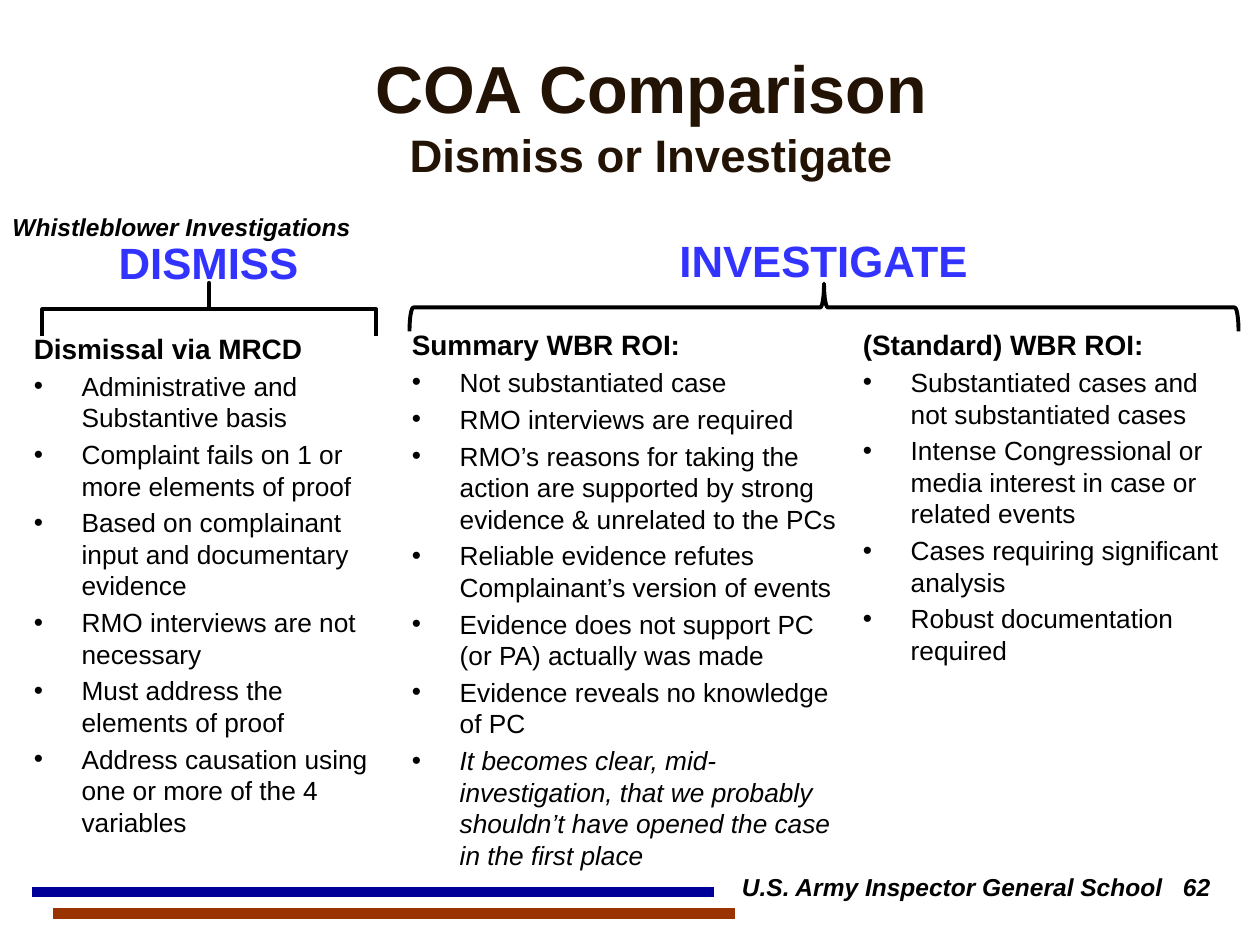
from dataclasses import dataclass

from pptx import Presentation
from pptx.dml.color import RGBColor
from pptx.enum.shapes import MSO_CONNECTOR, MSO_SHAPE
from pptx.enum.text import MSO_ANCHOR, PP_ALIGN
from pptx.oxml.ns import qn
from pptx.util import Inches, Pt
from lxml.etree import SubElement


@dataclass(frozen=True)
class Theme:
    font: str = "Arial"
    black: str = "000000"
    title: str = "221304"
    heading: str = "3333FF"
    blue_rule: str = "000099"
    red_rule: str = "993300"
    title_size: int = 38
    subtitle_size: int = 26
    heading_size: int = 25
    lead_size: int = 16
    bullet_size: int = 15
    label_size: int = 14
    bullet_space: int = 3


THEME = Theme()

# Left, top, width, heading, bullets, whether the last bullet is italic
COLUMNS = [
    (0.17, 2.58, 3, "Dismissal via MRCD", [
        "Administrative and Substantive basis",
        "Complaint fails on 1 or more elements of proof",
        "Based on complainant input and documentary evidence",
        "RMO interviews are not necessary",
        "Must address the elements of proof",
        "Address causation using one or more of the 4 variables",
    ], False),
    (3.17, 2.55, 3.58, "Summary WBR ROI:", [
        "Not substantiated case",
        "RMO interviews are required",
        "RMO’s reasons for taking the action are supported by strong "
        "evidence & unrelated to the PCs",
        "Reliable evidence refutes Complainant’s version of events",
        "Evidence does not support PC (or PA) actually was made",
        "Evidence reveals no knowledge of PC",
        "It becomes clear, mid‐investigation, that we probably "
        "shouldn’t have opened the case in the first place",
    ], True),
    (6.75, 2.55, 3.17, "(Standard) WBR ROI:", [
        "Substantiated cases and not substantiated cases",
        "Intense Congressional or media interest in case or related events",
        "Cases requiring significant analysis",
        "Robust documentation required",
    ], False),
]


def set_font(font, size, color=THEME.black, bold=True, italic=False):
    font.name = THEME.font
    font.size = Pt(size)
    font.color.rgb = RGBColor.from_string(color)
    font.bold = bold
    font.italic = italic


def add_text_frame(slide, left, top, width, height):
    box = slide.shapes.add_textbox(
        Inches(left), Inches(top), Inches(width), Inches(height))
    box.text_frame.word_wrap = True
    return box.text_frame


def add_label(slide, left, top, width, text, size, color=THEME.black,
              italic=False, align=PP_ALIGN.LEFT):
    paragraph = add_text_frame(slide, left, top, width, 0.5).paragraphs[0]
    paragraph.text = text
    paragraph.alignment = align
    set_font(paragraph.font, size, color, italic=italic)
    return paragraph


def add_tab_stop(paragraph, position):
    properties = paragraph._p.get_or_add_pPr()
    stops = SubElement(properties, qn("a:tabLst"))
    SubElement(stops, qn("a:tab"), pos=str(Inches(position)), algn="l")
    # The tab list must come before the default run properties
    properties.insert(0, stops)


def add_title(slide):
    frame = add_text_frame(slide, 0.67, 0.28, 9, 1.25)
    frame.vertical_anchor = MSO_ANCHOR.MIDDLE
    paragraph = frame.paragraphs[0]
    paragraph.alignment = PP_ALIGN.CENTER
    title = paragraph.add_run()
    title.text = "COA Comparison"
    set_font(title.font, THEME.title_size, THEME.title)
    paragraph.add_line_break()
    subtitle = paragraph.add_run()
    subtitle.text = "Dismiss or Investigate"
    set_font(subtitle.font, THEME.subtitle_size, THEME.title)


def add_bullet(frame, text, italic):
    paragraph = frame.add_paragraph()
    paragraph.text = text
    paragraph.space_before = Pt(THEME.bullet_space)
    properties = paragraph._p.get_or_add_pPr()
    indent = Inches(0.38)
    properties.set("marL", str(indent))
    properties.set("indent", str(-indent))
    SubElement(properties, qn("a:buFont"), typeface=THEME.font)
    SubElement(properties, qn("a:buChar"), char="•")
    set_font(paragraph.font, THEME.bullet_size, bold=False, italic=italic)


def add_column(slide, left, top, width, heading, bullets, italic_last):
    frame = add_text_frame(slide, left, top, width, 4.9)
    paragraph = frame.paragraphs[0]
    paragraph.text = heading
    set_font(paragraph.font, THEME.lead_size)
    for number, text in enumerate(bullets, start=1):
        add_bullet(frame, text, italic_last and number == len(bullets))


def add_brace(slide, left, top, width, height, curve):
    shape = slide.shapes.add_shape(
        MSO_SHAPE.RIGHT_BRACE,
        Inches(left), Inches(top), Inches(width), Inches(height))
    shape.rotation = 270
    shape.adjustments[0] = curve
    shape.shadow.inherit = False
    shape.fill.background()
    shape.line.color.rgb = RGBColor.from_string(THEME.black)
    shape.line.width = Pt(2.25)


def add_rule(slide, left, right, top, color):
    rule = slide.shapes.add_connector(
        MSO_CONNECTOR.STRAIGHT,
        Inches(left), Inches(top), Inches(right), Inches(top))
    rule.line.color.rgb = RGBColor.from_string(color)
    rule.line.width = Pt(6)
    SubElement(rule._element.spPr, qn("a:effectLst"))


def main():
    presentation = Presentation()
    presentation.slide_width = Inches(10)
    presentation.slide_height = Inches(7.5)
    slide = presentation.slides.add_slide(presentation.slide_layouts[6])

    # Footer rules and running labels
    add_rule(slide, 0.25, 5.67, 7.08, THEME.blue_rule)
    add_rule(slide, 0.42, 5.83, 7.25, THEME.red_rule)
    add_label(slide, 0, 1.63, 4.32, "Whistleblower Investigations",
              THEME.label_size, italic=True)
    footer = add_label(slide, 5.79, 6.87, 4.1,
                       "U.S. Army Inspector General School\t62",
                       THEME.label_size, italic=True)
    add_tab_stop(footer, 3.5)

    # Title and the three columns
    add_title(slide)
    for column in COLUMNS:
        add_column(slide, *column)

    # Braces with their headings
    add_brace(slide, 1.45, 1.13, 0.42, 2.65, curve=0)
    add_brace(slide, 6.35, -0.85, 0.38, 6.58, curve=0.08)
    for left, top, text in [(0.28, 1.82, "DISMISS"),
                            (5.16, 1.81, "INVESTIGATE")]:
        add_label(slide, left, top, 2.75, text, THEME.heading_size,
                  THEME.heading, align=PP_ALIGN.CENTER)

    presentation.save("out.pptx")


if __name__ == "__main__":
    main()
